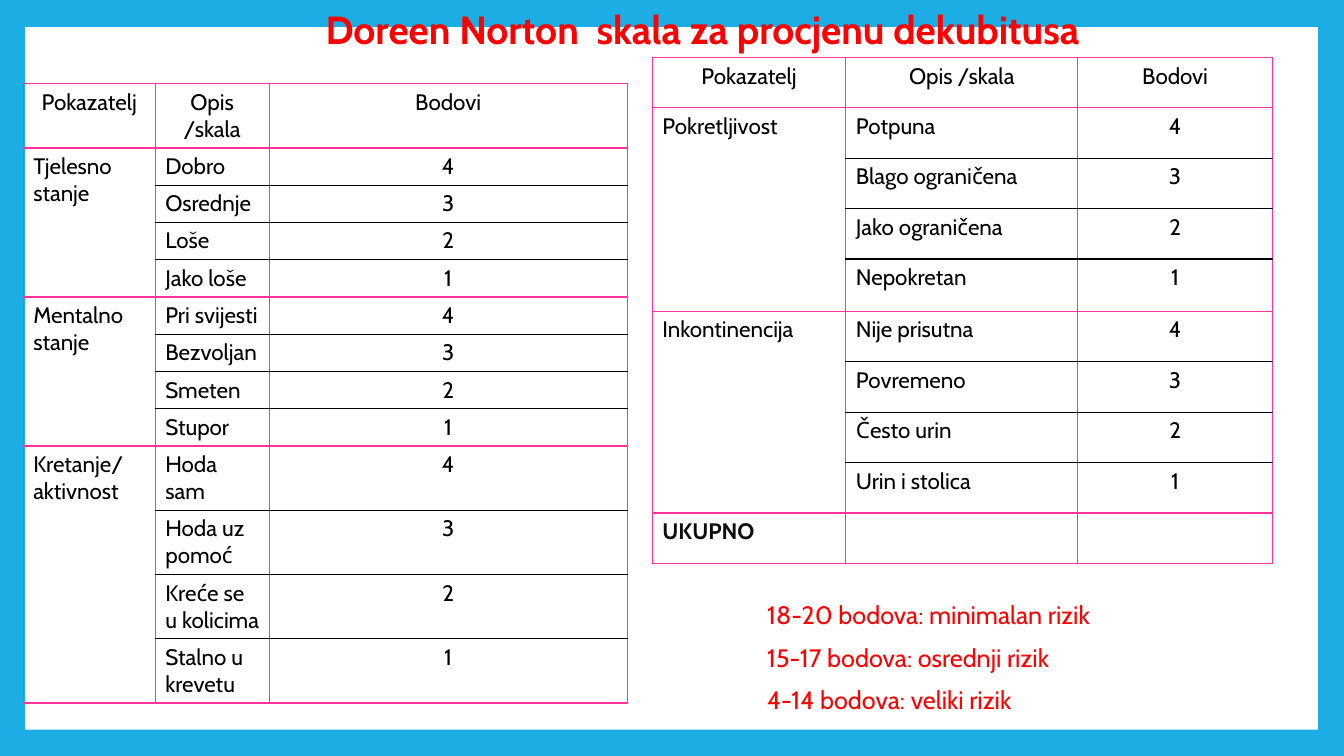
from dataclasses import dataclass

from pptx import Presentation
from pptx.dml.color import RGBColor
from pptx.enum import shapes, text
from pptx.oxml import parse_xml
from pptx.oxml.ns import nsdecls
from pptx import util as u

EMU_PER_PX = 9144
FONT = "Cabin"
BLUE = RGBColor(0x1C, 0xAD, 0xE4)
WHITE = RGBColor(0xFF, 0xFF, 0xFF)
BLACK = RGBColor(0x00, 0x00, 0x00)
NEAR_BLACK = RGBColor(0x0D, 0x0D, 0x0D)
PINK = RGBColor(0xFF, 0x33, 0x99)
RED = RGBColor(0xFF, 0x00, 0x00)
HEADERS = ("Pokazatelj", "Opis /skala", "Bodovi")


@dataclass(frozen=True)
class Indicator:
    """An indicator with its descriptions, from most to fewest points."""
    name: str
    options: tuple[str, ...]


@dataclass(frozen=True)
class ScoreTable:
    """A table of indicators, with lengths in px."""
    left: int
    top: int
    columns: tuple[int, ...]
    rows: tuple[int, ...]
    indicators: tuple[Indicator, ...]
    total: str = ""


@dataclass(frozen=True)
class Caption:
    """A red text box, with lengths in px and size in points."""
    left: int
    top: int
    width: int
    height: int
    lines: tuple[str, ...]
    size: int
    bold: bool = False
    spacing: float = 1.0


TABLES = (
    ScoreTable(23, 83, (131, 113, 355), (63,) + (37,) * 8 + (63,) * 4, (
        Indicator("Tjelesno stanje", ("Dobro", "Osrednje", "Loše", "Jako loše")),
        Indicator("Mentalno stanje", ("Pri svijesti", "Bezvoljan", "Smeten", "Stupor")),
        Indicator("Kretanje/aktivnost", ("Hoda sam", "Hoda uz pomoć",
                                         "Kreće se u kolicima", "Stalno u krevetu")),
    )),
    ScoreTable(647, 57, (192, 230, 193), (50,) * 4 + (52,) + (50,) * 5, (
        Indicator("Pokretljivost", ("Potpuna", "Blago ograničena",
                                    "Jako ograničena", "Nepokretan")),
        Indicator("Inkontinencija", ("Nije prisutna", "Povremeno",
                                     "Često urin", "Urin i stolica")),
    ), "UKUPNO"),
)
CAPTIONS = (
    Caption(313, 0, 851, 57, ("Doreen Norton  skala za procjenu dekubitusa",), 28, True),
    Caption(751, 578, 442, 132, ("18-20 bodova: minimalan rizik",
                                 "15-17 bodova: osrednji rizik",
                                 "4-14 bodova: veliki rizik"), 18, spacing=1.4),
)


def px(value: int) -> u.Emu:
    """Turn px into EMU."""
    return u.Emu(value * EMU_PER_PX)


def style(p, size: int, color: RGBColor, bold: bool = False) -> None:
    """Set the font of a paragraph."""
    p.font.name = FONT
    p.font.size = u.Pt(size)
    p.font.bold = bold
    p.font.color.rgb = color


def set_borders(cell, top: RGBColor, bottom: RGBColor) -> None:
    """Draw pink sides and the given top and bottom lines, without a fill."""
    tc_pr = cell._tc.get_or_add_tcPr()
    for tag, color in (("lnL", PINK), ("lnR", PINK), ("lnT", top), ("lnB", bottom)):
        tc_pr.append(parse_xml(
            f'<a:{tag} {nsdecls("a")} w="12700"><a:solidFill>'
            f'<a:srgbClr val="{color}"/></a:solidFill></a:{tag}>'))
    cell.fill.background()


def write(cell, words: str, centered: bool = False, total: bool = False) -> None:
    """Put one styled paragraph into a cell."""
    p = cell.text_frame.paragraphs[0]
    p.text = words
    p.alignment = text.PP_ALIGN.CENTER if centered else text.PP_ALIGN.LEFT
    style(p, 16, NEAR_BLACK if total else BLACK, total)


def add_score_table(slide, score: ScoreTable) -> None:
    """Draw a table of indicators and points."""
    table = slide.shapes.add_table(
        len(score.rows), len(score.columns), px(score.left), px(score.top),
        px(sum(score.columns)), px(sum(score.rows))).table
    table.first_row = table.horz_banding = False
    for column, width in zip(table.columns, score.columns):
        column.width = px(width)
    for row, height in zip(table.rows, score.rows):
        row.height = px(height)

    inner_lines = set()
    for i, header in enumerate(HEADERS):
        write(table.cell(0, i), header, centered=True)
    first = 1
    for indicator in score.indicators:
        count = len(indicator.options)
        last = first + count - 1
        table.cell(first, 0).merge(table.cell(last, 0))
        write(table.cell(first, 0), indicator.name)
        for i, option in enumerate(indicator.options):
            write(table.cell(first + i, 1), option)
            write(table.cell(first + i, 2), str(count - i), centered=True)
        inner_lines.update(range(first + 1, last + 1))
        first = last + 1
    if score.total:
        write(table.cell(first, 0), score.total, total=True)

    for i in range(len(score.rows)):
        for j in range(len(score.columns)):
            top, bottom = (BLACK if j and line in inner_lines else PINK
                           for line in (i, i + 1))
            set_borders(table.cell(i, j), top, bottom)


def add_caption(slide, caption: Caption) -> None:
    """Draw a red text box."""
    tf = slide.shapes.add_textbox(px(caption.left), px(caption.top),
                                  px(caption.width), px(caption.height)).text_frame
    tf.word_wrap = True
    tf.auto_size = text.MSO_AUTO_SIZE.SHAPE_TO_FIT_TEXT
    for i, line in enumerate(caption.lines):
        p = tf.add_paragraph() if i else tf.paragraphs[0]
        p.text = line
        p.line_spacing = caption.spacing
        style(p, caption.size, RED, caption.bold)


def main() -> None:
    """Build the slide and save it."""
    prs = Presentation()
    prs.slide_width, prs.slide_height = px(1333), px(750)
    slide = prs.slides.add_slide(prs.slide_layouts[6])
    slide.background.fill.solid()
    slide.background.fill.fore_color.rgb = BLUE

    sheet = slide.shapes.add_shape(shapes.MSO_SHAPE.RECTANGLE,
                                   px(25), px(27), px(1282), px(697))
    sheet.shadow.inherit = False
    sheet.fill.solid()
    sheet.fill.fore_color.rgb = WHITE
    sheet.line.fill.background()

    for score in TABLES:
        add_score_table(slide, score)
    for caption in CAPTIONS:
        add_caption(slide, caption)
    prs.save("out.pptx")


if __name__ == "__main__":
    main()
